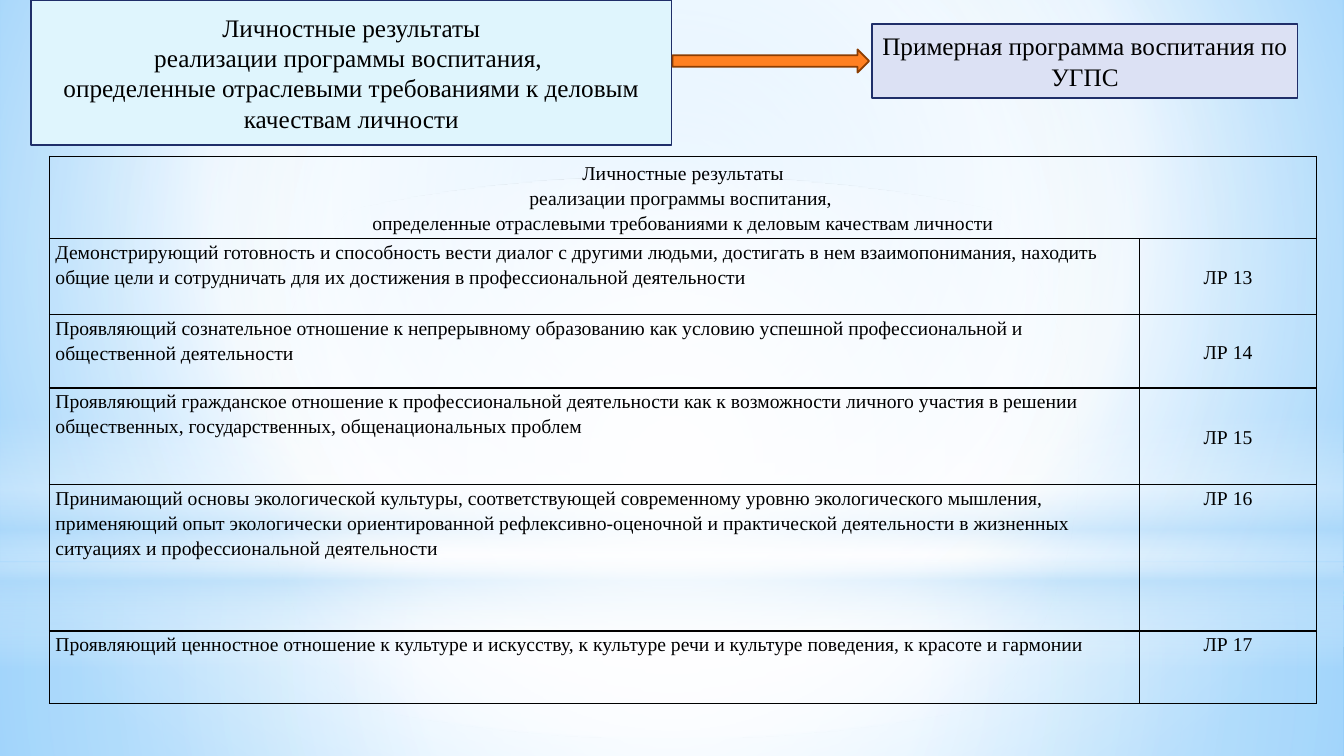
from lxml import etree
from pptx import Presentation
from pptx.dml.color import RGBColor
from pptx.enum.shapes import MSO_SHAPE
from pptx.enum.text import MSO_ANCHOR, MSO_AUTO_SIZE, PP_ALIGN
from pptx.oxml.ns import qn
from pptx.util import Inches, Pt

RECT, OVAL, ARROW = MSO_SHAPE.RECTANGLE, MSO_SHAPE.OVAL, MSO_SHAPE.RIGHT_ARROW
TOP, MIDDLE = MSO_ANCHOR.TOP, MSO_ANCHOR.MIDDLE
LEFT, CENTER = PP_ALIGN.LEFT, PP_ALIGN.CENTER
FIXED = MSO_AUTO_SIZE.NONE

BLACK = RGBColor(0x00, 0x00, 0x00)
WHITE = RGBColor(0xFF, 0xFF, 0xFF)
NAVY = RGBColor(0x1F, 0x2E, 0x69)
AQUA = RGBColor(0xDF, 0xF5, 0xFD)
LILAC = RGBColor(0xDC, 0xE1, 0xF4)
ORANGE = RGBColor(0xFF, 0x80, 0x21)
BROWN = RGBColor(0x8B, 0x3D, 0x02)
SKY = RGBColor(0xB4, 0xDC, 0xFA)
PALE = RGBColor(0x9E, 0xD5, 0xFF)
BLUE = RGBColor(0x5B, 0xB9, 0xFF)

WIDTH, HEIGHT = 13.33, 7.5
FONT = {"name": "Times New Roman", "bold": False}
MID = (50, 50, 50, 50)
GLOWS = [
    (RECT, (0, 5.58, WIDTH, 1.92), [(0, WHITE, 91), (37, WHITE, 76), (100, SKY, 79)], MID),
    (RECT, (0, 0, WIDTH, 5.58), [(0, WHITE, 89), (48, WHITE, 62), (100, SKY, 79)], MID),
    (RECT, (0, 4.12, WIDTH, 2.5), [(0, WHITE, 0), (29, WHITE, 30), (45, SKY, 40),
                                   (55, WHITE, 26), (65, SKY, 60), (100, WHITE, 0)], None),
    (OVAL, (0, 1.75, WIDTH, 5.58), [(0, WHITE, 100), (56, WHITE, 0)], MID),
]

TITLE = ("Личностные результаты\nреализации программы воспитания, \n"
         "определенные отраслевыми требованиями к деловым качествам личности")
PROGRAM = "Примерная программа воспитания по УГПС"
HEAD = ("Личностные результаты\nреализации программы воспитания, \v"
        "определенные отраслевыми требованиями к деловым качествам личности")
GOALS = [
    ("Демонстрирующий готовность и способность вести диалог с другими людьми, "
     "достигать в нем взаимопонимания, находить общие цели и сотрудничать для их "
     "достижения в профессиональной деятельности", "ЛР 13", MIDDLE),
    ("Проявляющий сознательное отношение к непрерывному образованию как условию "
     "успешной профессиональной и общественной деятельности", "ЛР 14", MIDDLE),
    ("Проявляющий гражданское отношение к профессиональной деятельности как к "
     "возможности личного участия в решении общественных, государственных, "
     "общенациональных проблем", "ЛР 15", MIDDLE),
    ("Принимающий основы экологической культуры, соответствующей современному "
     "уровню экологического мышления, применяющий опыт экологически ориентированной "
     "рефлексивно-оценочной и практической деятельности в жизненных ситуациях и "
     "профессиональной деятельности", "ЛР 16", TOP),
    ("Проявляющий ценностное отношение к культуре и искусству, к культуре речи и "
     "культуре поведения, к красоте и гармонии", "ЛР 17", TOP),
]
COLS = (10.81, 1.76)
ROWS = (0.82, 0.75, 0.73, 0.96, 1.45, 0.72)


def assign(item, values):
    """Set each attribute of the item from a dict."""
    for key, value in values.items():
        setattr(item, key, value)


def child(parent, tag, **attrs):
    """Add an XML child with the given attributes."""
    return etree.SubElement(parent, qn(tag), {k: str(v) for k, v in attrs.items()})


def blend(owner, stops, focus):
    """Replace the solid fill inside the owner with a gradient."""
    solid = next(owner.iter(qn("a:solidFill")))
    grad = etree.Element(qn("a:gradFill"), rotWithShape="1")
    series = child(grad, "a:gsLst")
    for place, color, alpha in stops:
        stop = child(series, "a:gs", pos=place * 1000)
        tint = child(stop, "a:srgbClr", val=color)
        child(tint, "a:alpha", val=alpha * 1000)
    if focus:
        route = child(grad, "a:path", path="circle")
        child(route, "a:fillToRect", **{k: v * 1000 for k, v in zip("ltrb", focus)})
    else:
        child(grad, "a:lin", ang=5400000, scaled=0)
    solid.getparent().replace(solid, grad)


def write(frame, text, size, align, spacing=1.0):
    """Fill a text frame with formatted paragraphs."""
    frame.text = text
    for para in frame.paragraphs:
        assign(para, {"alignment": align, "line_spacing": spacing})
        for run in para.runs:
            assign(run.font, FONT | {"size": Pt(size)})
            run.font.color.rgb = BLACK


def paint(shape, fill, line):
    """Give a shape a solid fill and an outline."""
    shape.fill.solid()
    shape.fill.fore_color.rgb = fill
    shape.line.color.rgb = line
    shape.line.width = Pt(1.25)


def figure(slide, kind, box):
    """Add a preset shape without a shadow."""
    shape = slide.shapes.add_shape(kind, *map(Inches, box))
    shape.shadow.inherit = False
    return shape


def backdrop(slide):
    """Draw the background and its soft glows."""
    slide.background.fill.solid()
    stops = [(0, PALE, 100), (60, WHITE, 100), (100, BLUE, 100)]
    blend(slide.background._cSld, stops, (20, 10, 20, 60))
    for kind, box, stops, focus in GLOWS:
        glow = figure(slide, kind, box)
        glow.fill.solid()
        glow.fill.fore_color.rgb = WHITE
        glow.line.fill.background()
        blend(glow._element.spPr, stops, focus)


def label(shape, text, fill):
    """Turn a shape into a captioned box."""
    paint(shape, fill, NAVY)
    assign(shape.text_frame, {"word_wrap": True, "auto_size": FIXED,
                              "vertical_anchor": MIDDLE})
    write(shape.text_frame, text, 18, CENTER)


def banner(slide, box):
    """Place the title, the arrow and the program box."""
    left, top, width, height = box
    title = slide.shapes.title
    slide.shapes._spTree.append(title._element)
    assign(title, {"left": Inches(left), "top": Inches(top),
                   "width": Inches(6.35), "height": Inches(height)})
    label(title, TITLE, AQUA)
    program = figure(slide, RECT, (left + width - 4.22, top + 0.24, 4.22, 0.73))
    label(program, PROGRAM, LILAC)
    paint(figure(slide, ARROW, (left + 6.36, top + 0.49, 1.95, 0.23)), ORANGE, BROWN)


def border(cell):
    """Draw thin black lines around a cell."""
    props = cell._tc.get_or_add_tcPr()
    for index, side in enumerate("LRTB"):
        line = etree.Element(qn("a:ln" + side), w=str(Pt(1)))
        child(child(line, "a:solidFill"), "a:srgbClr", val=BLACK)
        props.insert(index, line)


def entry(cell, text, align, anchor):
    """Write and format one table cell."""
    assign(cell, {"margin_left": Inches(0.06), "margin_right": Inches(0.06),
                  "margin_top": 0, "margin_bottom": 0, "vertical_anchor": anchor})
    write(cell.text_frame, text, 14, align, 1.15)


def results(slide, box):
    """Build the table of personal results."""
    frame = slide.shapes.add_table(len(ROWS), len(COLS), *map(Inches, box))
    table = frame.table
    assign(table, {"first_row": False, "horz_banding": False})
    for column, width in zip(table.columns, COLS):
        column.width = Inches(width)
    for row, height in zip(table.rows, ROWS):
        row.height = Inches(height)
    for cell in table.iter_cells():
        cell.fill.background()
        border(cell)
    table.cell(0, 0).merge(table.cell(0, 1))
    entry(table.cell(0, 0), HEAD, CENTER, MIDDLE)
    for index, (goal, code, anchor) in enumerate(GOALS, 1):
        entry(table.cell(index, 0), goal, LEFT, TOP)
        entry(table.cell(index, 1), code, CENTER, anchor)


def main():
    """Build and save the slide."""
    deck = Presentation()
    assign(deck, {"slide_width": Inches(WIDTH), "slide_height": Inches(HEIGHT)})
    slide = deck.slides.add_slide(deck.slide_layouts[5])
    backdrop(slide)
    banner(slide, (0.31, 0, 12.56, 1.44))
    results(slide, (0.49, 1.55, sum(COLS), sum(ROWS)))
    deck.save("out.pptx")


if __name__ == "__main__":
    main()
